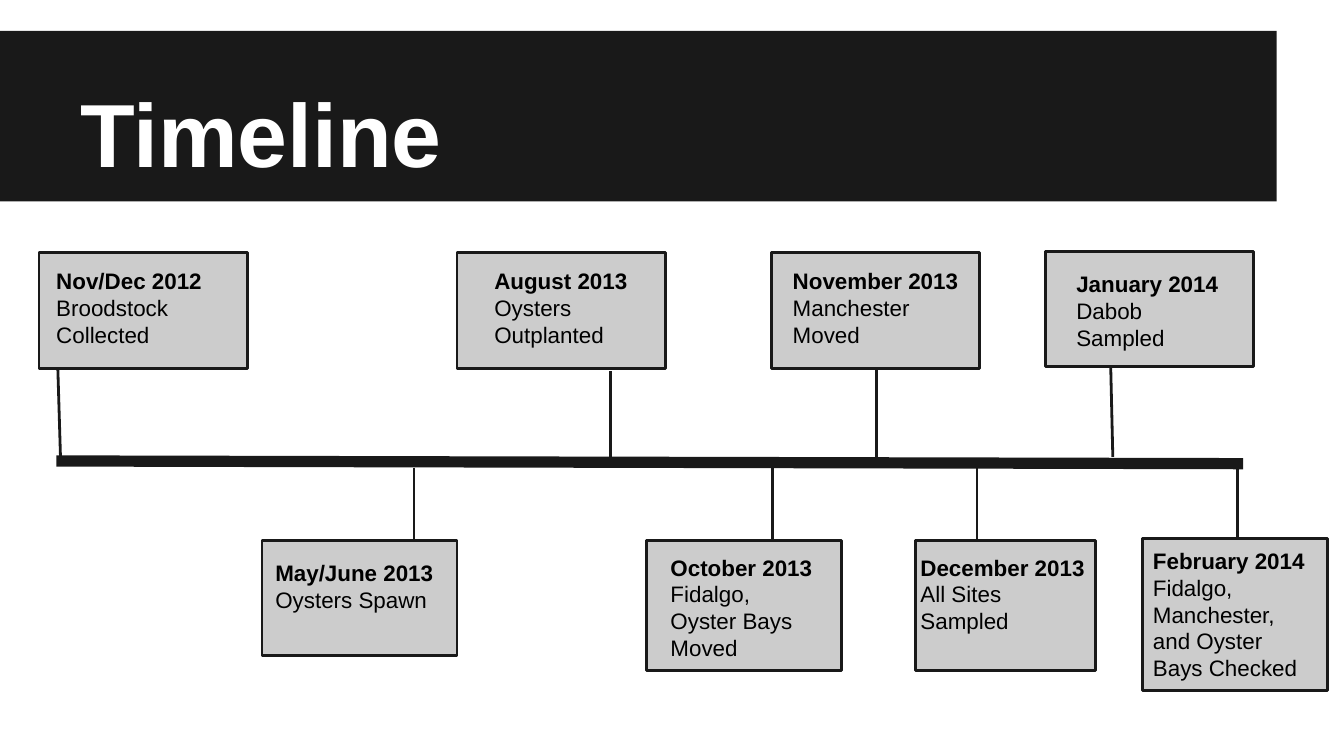
"""Build the oyster study timeline slide."""
from collections import namedtuple

from pptx import Presentation
from pptx.dml.color import RGBColor
from pptx.enum.shapes import MSO_CONNECTOR, MSO_SHAPE
from pptx.enum.text import MSO_ANCHOR
from pptx.oxml.ns import qn
from pptx.util import Inches, Pt

LINE, RECT = MSO_CONNECTOR.STRAIGHT, MSO_SHAPE.RECTANGLE
TOP, BOTTOM = MSO_ANCHOR.TOP, MSO_ANCHOR.BOTTOM
DARK = RGBColor(0x19, 0x19, 0x19)
GREY = RGBColor(0xCC, 0xCC, 0xCC)
BLACK = RGBColor(0, 0, 0)
WHITE = RGBColor(0xFF, 0xFF, 0xFF)

WIDTH = 10
HEIGHT = WIDTH * 9 / 16
BAND = (0, 0.23, 0.95 * WIDTH, 1.27)
TITLE = (0.05 * WIDTH, 0.23, 0.9 * WIDTH, 1.25)
AXIS = (0.42, 3.43, 9.25, 3.45)
UPPER, LOWER = 1.88, 4.02
WIDE, NARROW = 1.55, 1.45
SHORT, TALL = 0.86, 0.97

Event = namedtuple("Event", "date note box stem label")
EVENTS = [
    Event("Nov/Dec 2012", "Broodstock Collected", (0.29, UPPER, WIDE, SHORT),
          (0.45, 3.4, 0.43, 2.73), (0.32, 1.89, 1.49, 0.75)),
    Event("May/June 2013", "Oysters Spawn", (1.95, LOWER, NARROW, SHORT),
          (3.08, 3.48, 3.08, 4.15), (1.95, 4.06, NARROW, 0.79)),
    Event("August 2013", "Oysters Outplanted", (3.4, UPPER, WIDE, SHORT),
          (4.54, 3.4, 4.54, 2.76), (3.58, 1.89, 1.34, 0.82)),
    Event("October 2013", "Fidalgo, Oyster Bays Moved", (4.81, LOWER, NARROW, TALL),
          (5.75, 3.43, 5.75, 4.08), (4.89, LOWER, 1.29, SHORT)),
    Event("November 2013", "Manchester Moved", (5.74, UPPER, WIDE, SHORT),
          (6.52, 3.4, 6.52, 2.69), (5.8, 1.89, 1.49, 0.75)),
    Event("December 2013", "All Sites Sampled", (6.81, LOWER, 1.34, TALL),
          (7.27, 3.48, 7.27, 4.05), (6.75, LOWER, NARROW, TALL)),
    Event("January 2014", "Dabob Sampled", (7.78, 1.87, WIDE, SHORT),
          (8.28, 3.4, 8.26, 2.54), (7.91, 1.91, 1.38, 0.75)),
    Event("February 2014", "Fidalgo, Manchester, and Oyster Bays Checked",
          (8.5, 4.01, 1.38, 1.13), (9.21, 3.43, 9.21, 4.26), (8.48, 3.97, 1.42, TALL)),
]


def add_text(s, lines, at, size=12, color=BLACK, anchor=TOP):
    tf = s.shapes.add_textbox(*map(Inches, at)).text_frame
    tf.word_wrap = True
    tf.vertical_anchor = anchor
    tf.margin_left = tf.margin_right = tf.margin_top = tf.margin_bottom = Inches(0.1)
    for i, line in enumerate(lines):
        p = tf.add_paragraph() if i else tf.paragraphs[0]
        r = p.add_run()
        r.text = line
        r.font.name, r.font.size, r.font.bold = "Arial", Pt(size), i == 0
        r.font.color.rgb = color


def add_rect(s, at, fill, line=None):
    sp = s.shapes.add_shape(RECT, *map(Inches, at))
    sp.shadow.inherit = False
    sp.fill.solid()
    sp.fill.fore_color.rgb = fill
    if line is None:
        sp.line.fill.background()
    else:
        sp.line.color.rgb = line
        sp.line.width = Pt(1.5)


def add_line(s, ends, width):
    cx = s.shapes.add_connector(LINE, *map(Inches, ends))
    cx.line.color.rgb = DARK
    cx.line.width = Pt(width)
    sp_pr = cx._element.spPr
    sp_pr.append(sp_pr.makeelement(qn("a:effectLst"), {}))


def main():
    prs = Presentation()
    prs.slide_width, prs.slide_height = Inches(WIDTH), Inches(HEIGHT)
    s = prs.slides.add_slide(prs.slide_layouts[6])
    add_rect(s, BAND, DARK)
    add_text(s, ["Timeline"], TITLE, size=48, color=WHITE, anchor=BOTTOM)
    add_line(s, AXIS, 6)
    for event in EVENTS:
        add_line(s, event.stem, 1.5)
    for event in EVENTS:
        add_rect(s, event.box, GREY, line=DARK)
    for event in EVENTS:
        add_text(s, [event.date, event.note], event.label)
    prs.save("out.pptx")


if __name__ == "__main__":
    main()
